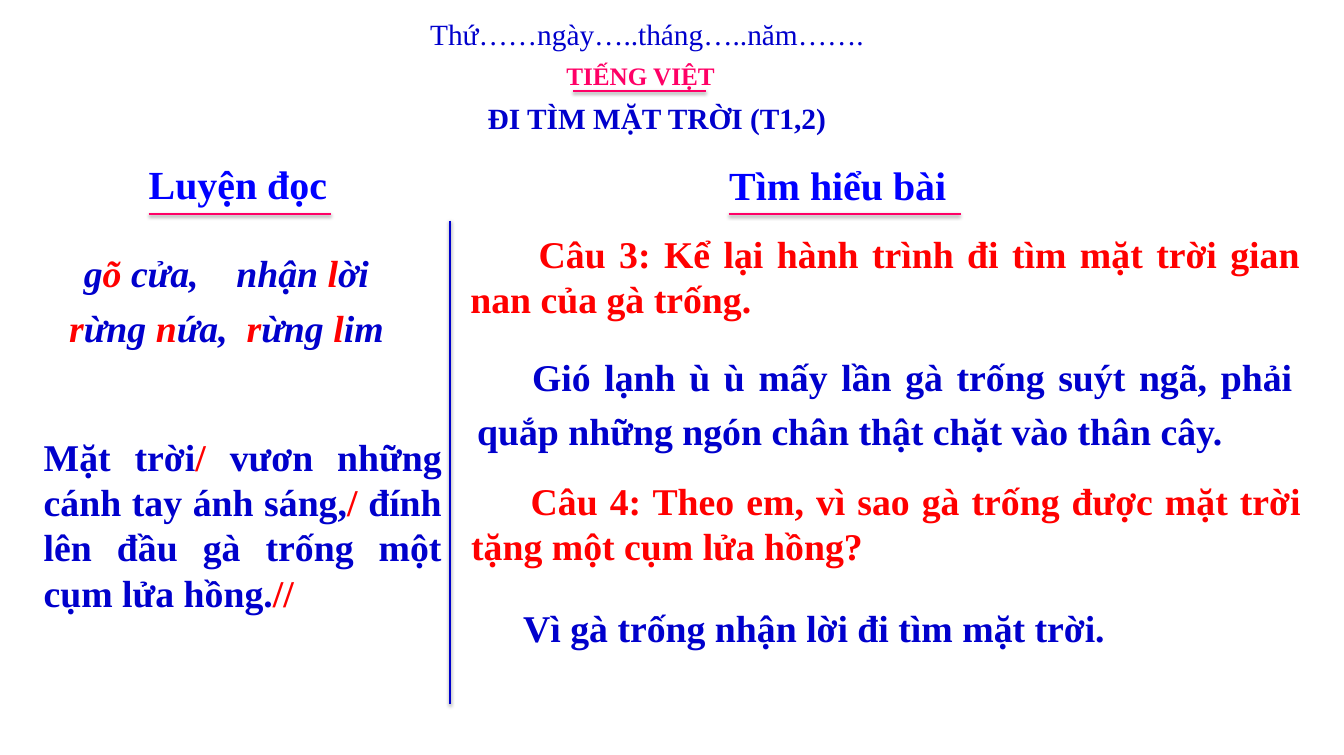
from lxml import etree
from pptx import Presentation
from pptx.dml.color import RGBColor
from pptx.enum.shapes import MSO_CONNECTOR
from pptx.enum.text import MSO_ANCHOR, MSO_AUTO_SIZE, PP_ALIGN
from pptx.oxml import parse_xml
from pptx.oxml.ns import nsdecls, qn
from pptx.util import Cm, Pt

STRAIGHT = MSO_CONNECTOR.STRAIGHT
TOP = MSO_ANCHOR.TOP
GROW = MSO_AUTO_SIZE.SHAPE_TO_FIT_TEXT
LEFT, CENTER, JUSTIFY = PP_ALIGN.LEFT, PP_ALIGN.CENTER, PP_ALIGN.JUSTIFY

COLORS = {"navy": "0000CC", "blue": "0000FF", "red": "FF0000", "pink": "FF0066"}
SHADOW = (
    f'<a:effectLst {nsdecls("a")}>'
    '<a:outerShdw blurRad="40000" dist="20000" dir="5400000" rotWithShape="0">'
    '<a:srgbClr val="000000"><a:alpha val="38000"/></a:srgbClr>'
    '</a:outerShdw></a:effectLst>'
)


class Board:
    """Holds the lesson style and the current slide."""

    font = "Times New Roman"

    def __init__(self, slide):
        self.slide = slide

    def color(self, name):
        return RGBColor.from_string(COLORS[name])

    def fill(self, shape, text, size, color, align, bold=True, italic=False,
             wrap=True, pad=(0.25, 0.13), space=None, indent=0, tab=None):
        """Write text; parts between bars are red."""
        frame = shape.text_frame
        frame.word_wrap = wrap
        frame.auto_size = GROW
        frame.vertical_anchor = TOP
        frame.margin_left = frame.margin_right = Cm(pad[0])
        frame.margin_top = frame.margin_bottom = Cm(pad[1])
        para = frame.paragraphs[0]
        para.alignment = align
        if space:
            para.line_spacing = space
        props = para._p.get_or_add_pPr()
        if indent:
            props.set("indent", str(Cm(indent)))
        if tab:
            tabs = etree.SubElement(props, qn("a:tabLst"))
            etree.SubElement(tabs, qn("a:tab"), pos=str(Cm(tab)), algn="l")
        for i, part in enumerate(text.split("|")):
            if part:
                run = para.add_run()
                run.text = part
                font = run.font
                font.name, font.size = self.font, Pt(size)
                font.bold, font.italic = bold, italic
                font.color.rgb = self.color("red" if i % 2 else color)

    def title(self, box, text, size, color, **style):
        shape = self.slide.shapes.title
        shape.left, shape.top, shape.width, shape.height = map(Cm, box)
        self.fill(shape, text, size, color, CENTER, **style)

    def text(self, box, text, size=36, color="navy", align=JUSTIFY, **style):
        shape = self.slide.shapes.add_textbox(*map(Cm, box))
        self.fill(shape, text, size, color, align, **style)

    def line(self, start, end, color="pink"):
        line = self.slide.shapes.add_connector(STRAIGHT, *map(Cm, start + end))
        line.line.color.rgb = self.color(color)
        line.line.width = Pt(2)
        line._element.spPr.append(parse_xml(SHADOW))

    def head(self, box, text, start, end):
        self.text(box, text, 38, "blue", CENTER, wrap=False, pad=(0.2, 0.1))
        self.line(start, end)


def main():
    deck = Presentation()
    deck.slide_width, deck.slide_height = Cm(45.21), Cm(25.4)
    board = Board(deck.slides.add_slide(deck.slide_layouts[5]))

    # Date, subject and lesson title
    board.text((14.22, 0.41, 15.27, 1.45), "Thứ……ngày…..tháng…..năm…….", 28,
               align=LEFT, bold=False, wrap=False)
    board.text((18.8, 1.9, 5.56, 1.27), "TIẾNG VIỆT", 24, "pink", LEFT, wrap=False)
    board.line((19.28, 3.07), (23.75, 3.07))
    board.title((15.42, 3.18, 13.34, 1.6), "ĐI TÌM MẶT TRỜI (T1,2)", 28, "navy",
                pad=(0.4, 0.2))

    # Column heads and divider
    board.head((4.78, 5.26, 6.45, 1.83), "Luyện đọc", (5, 7.2), (11.13, 7.2))
    board.head((24.31, 5.31, 7.75, 1.83), "Tìm hiểu bài", (24.51, 7.2), (32.31, 7.2))
    board.line((15.14, 7.42), (15.14, 23.7), "navy")

    # Reading practice
    board.text((2.57, 8.28, 4.88, 1.8), "g|õ |cửa,", italic=True)
    board.text((7.7, 8.26, 5, 1.8), "nhận |l|ời", italic=True, wrap=False)
    board.text((2.08, 10.11, 12.17, 1.8), "|r|ừng |n|ứa,\t|r|ừng |l|im",
               align=LEFT, italic=True, tab=5.97)
    board.text((1.22, 14.45, 13.89, 6.4),
               "Mặt trời|/ |vươn những cánh tay ánh sáng,|/ |"
               "đính lên đầu gà trống một cụm lửa hồng.|//")

    # Questions and answers
    board.text((15.57, 7.62, 28.42, 3.33),
               "Câu 3: Kể lại hành trình đi tìm mặt trời gian nan của gà trống.",
               color="red", indent=2.3)
    board.text((15.8, 11.46, 27.94, 3.96),
               "Gió lạnh ù ù mấy lần gà trống suýt ngã, phải quắp những ngón chân "
               "thật chặt vào thân cây.", space=1.2, indent=1.85)
    board.text((15.6, 15.93, 28.42, 3.33),
               "Câu 4: Theo em, vì sao gà trống được mặt trời tặng một cụm lửa hồng?",
               color="red", indent=2)
    board.text((17.35, 19.91, 23.44, 2.11), "Vì gà trống nhận lời đi tìm mặt trời.",
               space=1.2)

    deck.save("out.pptx")


if __name__ == "__main__":
    main()
